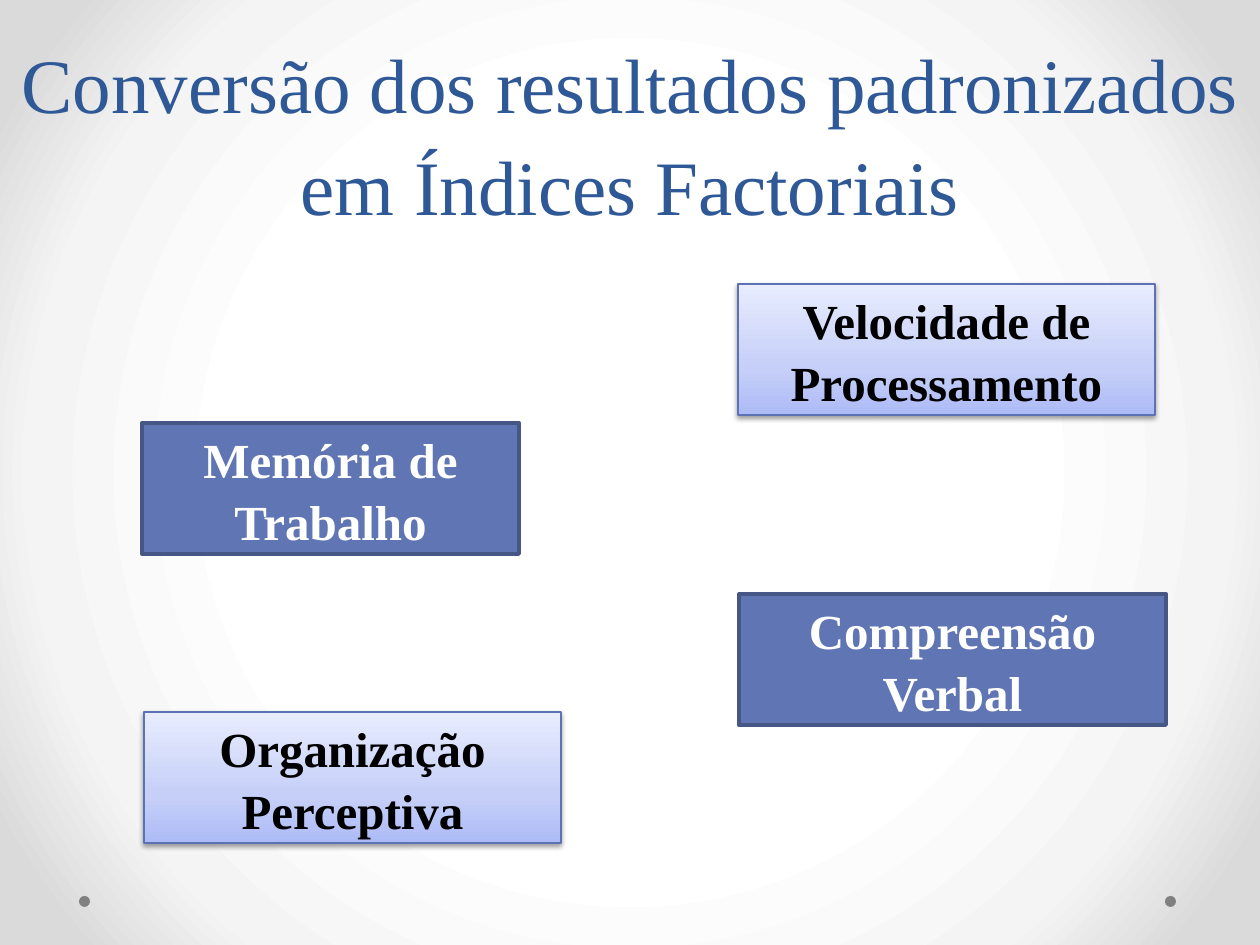
import pptx
import pptx.util
import pptx.dml.color
import pptx.enum.shapes
import pptx.enum.text
import pptx.oxml
import pptx.oxml.ns

EMU_PER_PX = 914400 / 126
FONT = "Times New Roman"
NS = pptx.oxml.ns.nsdecls("a")
COLORS = {
    "title": "2F5897", "dot": "808080",
    "solid": "6076B4", "solid_line": "475785", "solid_text": "FFFFFF",
    "light_line": "5C72B2", "light_text": "000000",
}
BACKGROUND_STOPS = [(50, "FFFFFF"), (76, "F4F4F4"), (92, "DADADA")]
LIGHT_STOPS = [(0, "ADBBF6"), (35, "C5CFF8"), (100, "E8ECFD")]
SHADOW = (
    f'<a:effectLst {NS}><a:outerShdw blurRad="39400" dist="20300" dir="5400000" rotWithShape="0">'
    '<a:srgbClr val="000000"><a:alpha val="38000"/></a:srgbClr></a:outerShdw></a:effectLst>'
)


def px(*lengths):
    return [round(length * EMU_PER_PX) for length in lengths]


def set_gradient(owner, stops, direction):
    """Replace the gradient inside owner by the given stops and direction."""
    old = owner.find(".//" + pptx.oxml.ns.qn("a:gradFill"))
    stop_xml = "".join(
        f'<a:gs pos="{pos * 1000}"><a:srgbClr val="{color}"/></a:gs>' for pos, color in stops)
    new = pptx.oxml.parse_xml(
        f'<a:gradFill {NS} rotWithShape="1"><a:gsLst>{stop_xml}</a:gsLst>{direction}</a:gradFill>')
    old.getparent().replace(old, new)


rgb = {name: pptx.dml.color.RGBColor.from_string(value) for name, value in COLORS.items()}
deck = pptx.Presentation()
deck.slide_width, deck.slide_height = px(1260, 945)
slide = deck.slides.add_slide(deck.slide_layouts[6])

# Radial background
slide.background.fill.gradient()
set_gradient(slide._element, BACKGROUND_STOPS,
             '<a:path path="circle"><a:fillToRect l="50000" t="50000" r="50000" b="50000"/></a:path>')

# Corner dots
for left in (1165, 79):
    dot = slide.shapes.add_shape(pptx.enum.shapes.MSO_SHAPE.OVAL, *px(left, 896, 11, 11))
    dot.shadow.inherit = False
    dot.fill.solid()
    dot.fill.fore_color.rgb = rgb["dot"]
    dot.line.fill.background()

# Title
title = slide.shapes.add_textbox(*px(0, 16, 1261, 221))
title.text_frame.word_wrap = True
title.text_frame.vertical_anchor = pptx.enum.text.MSO_ANCHOR.BOTTOM
title.text_frame.text = "Conversão dos resultados padronizados em Índices Factoriais"
heading = title.text_frame.paragraphs[0]
heading.alignment = pptx.enum.text.PP_ALIGN.CENTER
heading.line_spacing = pptx.util.Pt(58)
heading_font = heading.runs[0].font
heading_font.name = FONT
heading_font.size = pptx.util.Pt(44)
heading_font.color.rgb = rgb["title"]

# Factor index boxes: label, left, top, width, style
indices = [
    ("Memória de Trabalho", 142, 423, 377, "solid"),
    ("Organização Perceptiva", 144, 712, 417, "light"),
    ("Velocidade de Processamento", 738, 284, 417, "light"),
    ("Compreensão Verbal", 739, 594, 427, "solid"),
]
for label, left, top, width, style in indices:
    box = slide.shapes.add_shape(
        pptx.enum.shapes.MSO_SHAPE.RECTANGLE, *px(left, top, width, 131))
    box.shadow.inherit = False
    box.line.color.rgb = rgb[style + "_line"]
    if style == "solid":
        box.fill.solid()
        box.fill.fore_color.rgb = rgb["solid"]
        box.line.width = pptx.util.Pt(2.25)
    else:
        box.fill.gradient()
        properties = box._element.spPr
        set_gradient(properties, LIGHT_STOPS, '<a:lin ang="16200000" scaled="0"/>')
        box.line.width = pptx.util.Pt(0.75)
        no_shadow = properties.find(pptx.oxml.ns.qn("a:effectLst"))
        properties.replace(no_shadow, pptx.oxml.parse_xml(SHADOW))

    box.text_frame.word_wrap = True
    box.text_frame.vertical_anchor = pptx.enum.text.MSO_ANCHOR.MIDDLE
    box.text_frame.text = label
    paragraph = box.text_frame.paragraphs[0]
    paragraph.alignment = pptx.enum.text.PP_ALIGN.CENTER
    paragraph.line_spacing = 1.05
    font = paragraph.runs[0].font
    font.name = FONT
    font.size = pptx.util.Pt(28)
    font.bold = True
    font.color.rgb = rgb[style + "_text"]

deck.save("out.pptx")
